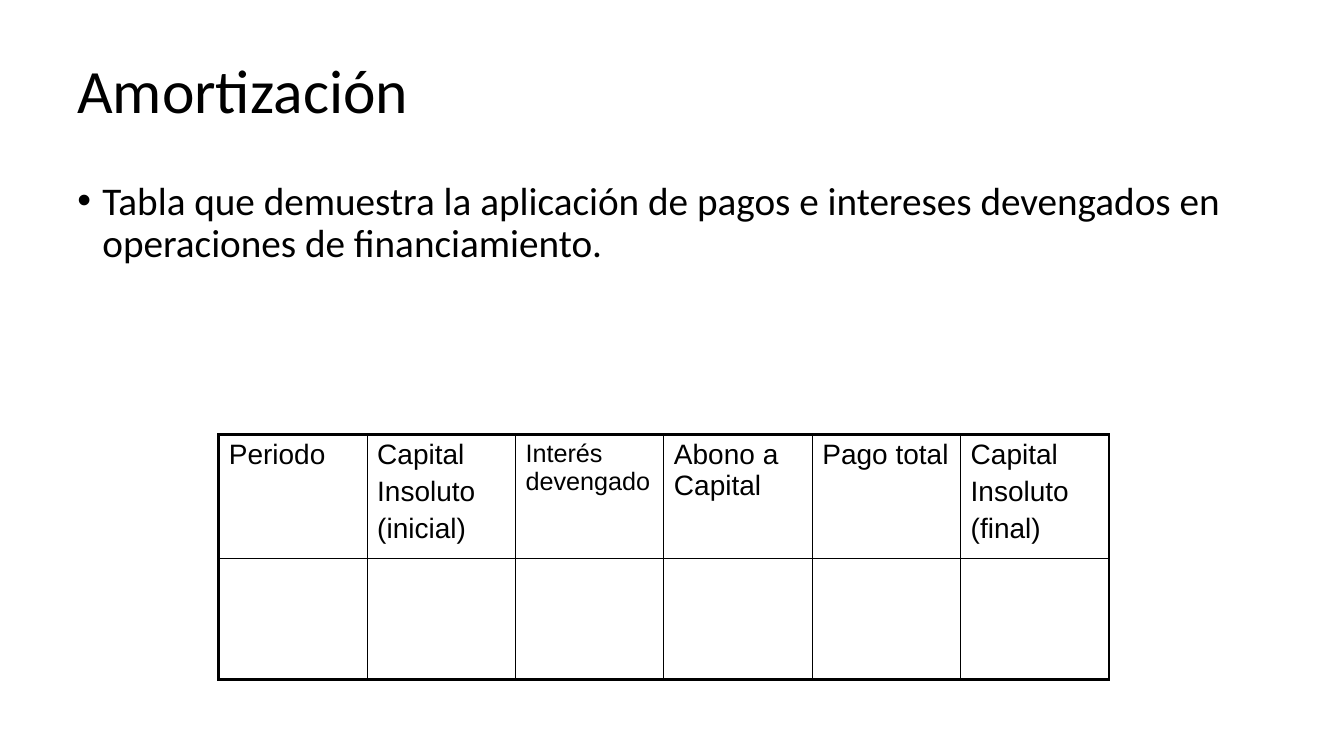
from lxml.etree import SubElement
from pptx import Presentation
from pptx.dml.color import RGBColor
from pptx.enum.text import MSO_ANCHOR, PP_ALIGN
from pptx.oxml.ns import qn
from pptx.util import Pt

BLACK = RGBColor(0, 0, 0)
THICK, THIN = Pt(2.25), Pt(1)
HEADS = [
    ("Periodo", 20),
    ("Capital\nInsoluto\n(inicial)", 20),
    ("Interés devengado", 18),
    ("Abono a Capital", 20),
    ("Pago total", 20),
    ("Capital\nInsoluto\n(final)", 20),
]
ROWS = (88.5, 86.5)


def style(frame, font, size, **format):
    """Set the font and paragraph format of a text frame."""
    for para in frame.paragraphs:
        for name, value in format.items():
            setattr(para, name, value)
        for name, value in {"name": font, "size": Pt(size)}.items():
            setattr(para.font, name, value)
        para.font.color.rgb = BLACK


def fill_holder(holder, text, box, size, anchor, before):
    """Place and format a text placeholder."""
    sides = ("left", "top", "width", "height")
    for side, value in zip(sides, box):
        setattr(holder, side, Pt(value))
    frame = holder.text_frame
    frame.text = text
    frame.vertical_anchor = anchor
    style(frame, "Calibri", size, alignment=PP_ALIGN.LEFT,
          line_spacing=0.9, space_before=Pt(before))


def add_bullet(para):
    """Give a paragraph a hanging round bullet."""
    props = para._p.get_or_add_pPr()
    props.set("marL", str(Pt(18)))
    props.set("indent", str(Pt(-18)))
    SubElement(props, qn("a:buFont")).set("typeface", "Arial")
    SubElement(props, qn("a:buChar")).set("char", "•")


def add_edges(cell, widths):
    """Draw the four borders of a cell."""
    props = cell._tc.get_or_add_tcPr()
    for side, width in widths.items():
        line = SubElement(props, qn(f"a:ln{side}"), w=str(width))
        fill = SubElement(line, qn("a:solidFill"))
        SubElement(fill, qn("a:srgbClr"), val=str(BLACK))
    cell.fill.background()


def add_grid(slide):
    """Add the table with its headings and an empty row."""
    count = len(HEADS)
    shape = slide.shapes.add_table(len(ROWS), count, Pt(156.25), Pt(310.25),
                                   Pt(636), Pt(sum(ROWS)))
    table = shape.table
    table.first_row = table.horz_banding = False
    for row, height in enumerate(ROWS):
        table.rows[row].height = Pt(height)
        for col, (text, size) in enumerate(HEADS):
            cell = table.cell(row, col)
            add_edges(cell, {
                "L": THICK if col == 0 else THIN,
                "R": THICK if col == count - 1 else THIN,
                "T": THICK if row == 0 else THIN,
                "B": THICK if row == len(ROWS) - 1 else THIN,
            })
            if row == 0:
                cell.text = text
                style(cell.text_frame, "Arial", size, space_before=Pt(size / 5))


def main():
    """Build and save the slide."""
    deck = Presentation()
    deck.slide_width, deck.slide_height = Pt(960), Pt(540)
    slide = deck.slides.add_slide(deck.slide_layouts[1])
    title, body = slide.placeholders
    fill_holder(title, "Amortización", (48, 21.6, 864, 90), 44,
                MSO_ANCHOR.MIDDLE, 0)
    fill_holder(body, "Tabla que demuestra la aplicación de pagos e intereses "
                "devengados en operaciones de financiamiento.",
                (48, 126, 864, 172), 28, MSO_ANCHOR.TOP, 10)
    add_bullet(body.text_frame.paragraphs[0])
    add_grid(slide)
    deck.save("out.pptx")


if __name__ == "__main__":
    main()
